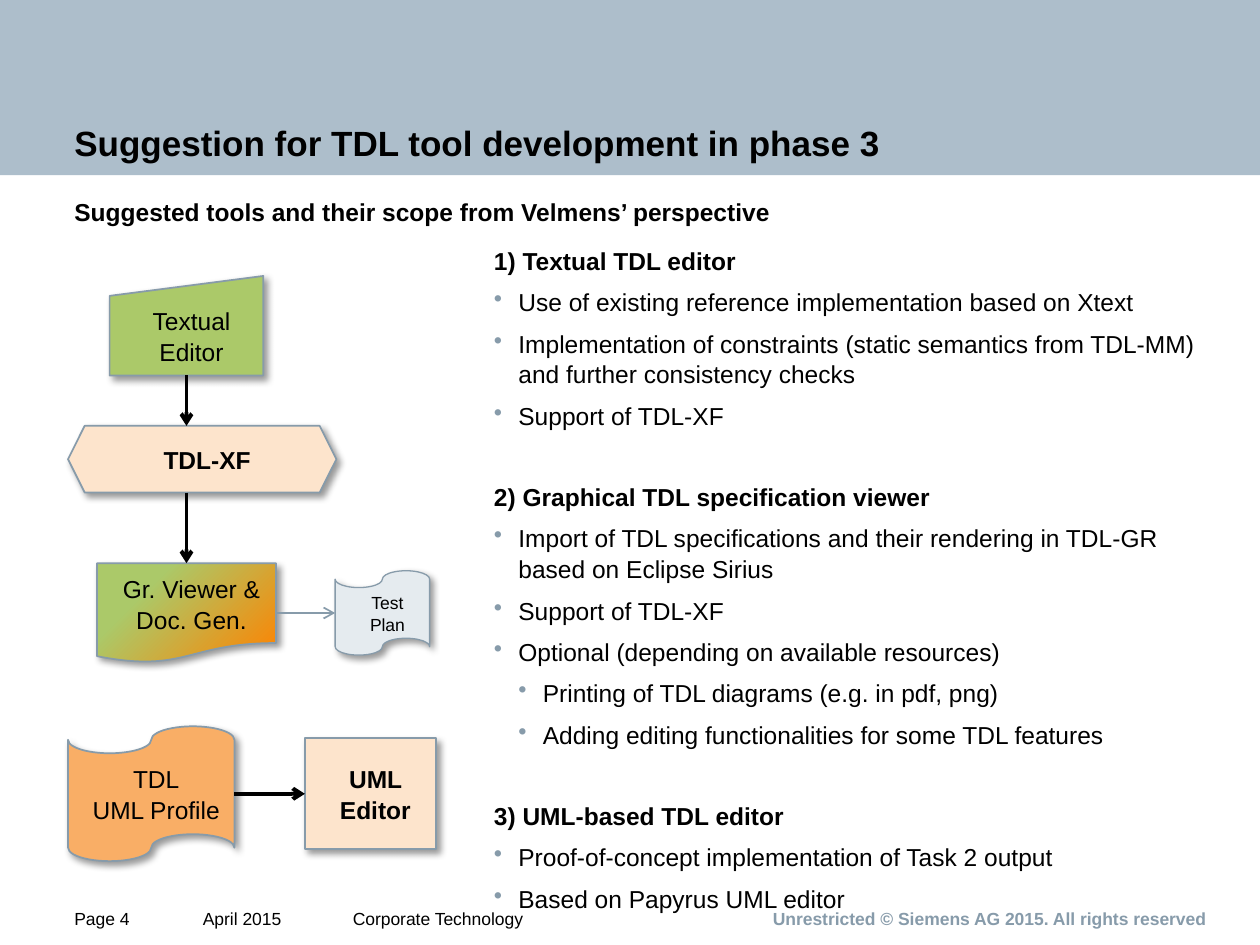
import pptx
import pptx.util
import pptx.dml.color
import pptx.enum.shapes
import pptx.enum.text
import pptx.oxml
import pptx.oxml.ns

SHAPE = pptx.enum.shapes.MSO_SHAPE
ALIGN = pptx.enum.text.PP_ALIGN
ANCHOR = pptx.enum.text.MSO_ANCHOR
COLS, ROWS = 100, 75
SLIDE_W, SLIDE_H = pptx.util.Inches(10), pptx.util.Inches(7.5)
BLACK, SLATE, BAND = "000000", "879BAA", "ADBECB"
GREEN, ORANGE, PEACH, APRICOT, MIST = "ABC969", "FF8200", "FDE4CC", "F9AE66", "E5EBEF"

TOOLS = [
    ("1) Textual TDL editor", [
        (1, "Use of existing reference implementation based on Xtext"),
        (1, "Implementation of constraints (static semantics from TDL-MM) "
            "and further consistency checks"),
        (1, "Support of TDL-XF")]),
    ("2) Graphical TDL specification viewer", [
        (1, "Import of TDL specifications and their rendering in TDL-GR based on Eclipse Sirius"),
        (1, "Support of TDL-XF"),
        (1, "Optional (depending on available resources)"),
        (2, "Printing of TDL diagrams (e.g. in pdf, png)"),
        (2, "Adding editing functionalities for some TDL features")]),
    ("3) UML-based TDL editor", [
        (1, "Proof-of-concept implementation of Task 2 output"),
        (1, "Based on Papyrus UML editor")]),
]


def rgb(color):
    return pptx.dml.color.RGBColor.from_string(color)


def across(cols):
    return round(SLIDE_W * cols / COLS)


def down(rows):
    return round(SLIDE_H * rows / ROWS)


def place(box, col, row, width, height):
    """Turn grid units inside a region box into lengths on the slide."""
    return across(box[0] + col), down(box[1] + row), across(width), down(height)


def xml(parent, markup):
    tag, rest = markup.split(" ", 1)
    element = pptx.oxml.parse_xml(f"<{tag} {pptx.oxml.ns.nsdecls('a')} {rest}")
    parent.append(element)


def style(paragraph, size, bold=False, color=BLACK, align=ALIGN.LEFT, spacing=1.05):
    paragraph.alignment = align
    paragraph.line_spacing = spacing
    font = paragraph.font
    font.name, font.size, font.bold = "Arial", pptx.util.Pt(size), bold
    font.color.rgb = rgb(color)


def set_frame(frame, insets=(0, 0, 0, 0), anchor=ANCHOR.TOP):
    frame.word_wrap = True
    frame.vertical_anchor = anchor
    left, top, right, bottom = insets
    frame.margin_left, frame.margin_right = across(left), across(right)
    frame.margin_top, frame.margin_bottom = down(top), down(bottom)


def add_text(slide, bounds, text, size, insets=(0, 0, 0, 0), anchor=ANCHOR.TOP, **look):
    frame = slide.shapes.add_textbox(*bounds).text_frame
    set_frame(frame, insets, anchor)
    frame.paragraphs[0].text = text
    style(frame.paragraphs[0], size, **look)


def header(slide, box):
    bounds = place(box, 0, 0, *box[2:])
    band = slide.shapes.add_shape(SHAPE.RECTANGLE, *bounds)
    band.shadow.inherit = False
    band.fill.solid()
    band.fill.fore_color.rgb = rgb(BAND)
    band.line.fill.background()
    add_text(slide, bounds, "Suggestion for TDL tool development in phase 3", 20,
             insets=(5.9, 4.3, 23.2, 2.6), anchor=ANCHOR.BOTTOM, bold=True)


def subtitle(slide, box):
    add_text(slide, place(box, 0, 0, *box[2:]),
             "Suggested tools and their scope from Velmens’ perspective", 14, bold=True)


def tool_list(slide, box):
    frame = slide.shapes.add_textbox(*place(box, 0, 0, *box[2:])).text_frame
    set_frame(frame)
    indent = across(1.94)

    def add_line(text, level, before, bullet):
        line = frame.paragraphs[0] if not frame.text else frame.add_paragraph()
        line.text = text
        line.space_before = pptx.util.Pt(before)
        properties = line._p.get_or_add_pPr()
        properties.set("marL", str(indent * level))
        properties.set("indent", str(-indent))
        line.line_spacing = 1.05
        if bullet:
            xml(properties, f'a:buClr ><a:srgbClr val="{SLATE}"/></a:buClr>')
            xml(properties, 'a:buChar char="•"/>')
        style(line, 14, bold=not bullet)

    for number, (heading, points) in enumerate(TOOLS):
        add_line(heading, 1, 28.8 if number else 0, False)
        for level, point in points:
            add_line(point, level, 6, True)


def add_node(slide, bounds, kind, text, fill, size=14, bold=False, border=1):
    node = slide.shapes.add_shape(kind, *bounds)
    node.shadow.inherit = False
    effects = node._element.spPr.find(pptx.oxml.ns.qn("a:effectLst"))
    xml(effects, 'a:outerShdw blurRad="50800" dist="38100" dir="2700000" algn="tl" '
                 f'rotWithShape="0"><a:srgbClr val="{BLACK}"><a:alpha val="40000"/>'
                 '</a:srgbClr></a:outerShdw>')
    if isinstance(fill, tuple):
        node.fill.gradient()
        node.fill.gradient_angle = 315
        for stop, position, color in zip(node.fill.gradient_stops, (0.27, 1), fill):
            stop.position = position
            stop.color.rgb = rgb(color)
    else:
        node.fill.solid()
        node.fill.fore_color.rgb = rgb(fill)
    node.line.color.rgb = rgb(SLATE)
    node.line.width = pptx.util.Pt(border)
    set_frame(node.text_frame, (1.6, 0.8, 0.8, 0.8), ANCHOR.MIDDLE)
    label = node.text_frame.paragraphs[0]
    label.text = text
    style(label, size, bold=bold, align=ALIGN.CENTER)
    return node


def add_arrow(slide, start, end, color=BLACK, width=2.25):
    """Each end is a (node, side) pair, or a point on the slide."""
    arrow = slide.shapes.add_connector(pptx.enum.shapes.MSO_CONNECTOR.STRAIGHT, 0, 0, 0, 0)
    if isinstance(start[0], int):
        arrow.begin_x, arrow.begin_y = start
    else:
        arrow.begin_connect(*start)
    if isinstance(end[0], int):
        arrow.end_x, arrow.end_y = end
    else:
        arrow.end_connect(*end)
    arrow.line.color.rgb = rgb(color)
    arrow.line.width = pptx.util.Pt(width)
    xml(arrow.line._get_or_add_ln(), 'a:tailEnd type="arrow"/>')
    xml(arrow._element.spPr, "a:effectLst />")


def tool_chain(slide, box):
    # Exchange format between textual editor and viewer
    exchange = add_node(slide, place(box, 0, 11.9, 21.3, 5.3), SHAPE.HEXAGON,
                        "TDL-XF", PEACH, bold=True)
    editor = add_node(slide, place(box, 3.3, 0, 12.2, 7.9), SHAPE.FLOWCHART_MANUAL_INPUT,
                      "Textual Editor", GREEN)
    viewer = add_node(slide, place(box, 2.3, 22.8, 14.2, 7.9), SHAPE.FLOWCHART_DOCUMENT,
                      "Gr. Viewer & Doc. Gen.", (GREEN, ORANGE))
    axis = editor.left + editor.width // 2
    add_arrow(slide, (editor, 2), (axis, exchange.top))
    add_arrow(slide, (axis, exchange.top + exchange.height), (viewer, 0))

    # Generated document
    plan = add_node(slide, place(box, 21.2, 23.4, 7.5, 6.7), SHAPE.FLOWCHART_PUNCHED_TAPE,
                    "Test Plan", MIST, size=10, border=0.75)
    add_arrow(slide, (viewer, 3), (plan, 1), SLATE, 1)

    # UML route
    profile = add_node(slide, place(box, 0, 35.75, 13.2, 10.7), SHAPE.FLOWCHART_PUNCHED_TAPE,
                       "TDL\nUML Profile", APRICOT)
    uml_editor = add_node(slide, place(box, 18.8, 36.7, 10.4, 8.8), SHAPE.RECTANGLE,
                          "UML Editor", PEACH, bold=True)
    add_arrow(slide, (profile, 3), (uml_editor, 1))


def footer(slide, box):
    for col, width, text in ((0, 6.5, "Page 4"), (10.2, 11.8, "April 2015"),
                             (22.1, 22, "Corporate Technology")):
        add_text(slide, place(box, col, 0, width, box[3]), text, 10,
                 anchor=ANCHOR.BOTTOM, spacing=1)
    add_text(slide, place(box, 45.7, 0, 44.1, box[3]),
             "Unrestricted © Siemens AG 2015. All rights reserved", 10, anchor=ANCHOR.BOTTOM,
             bold=True, color=SLATE, align=ALIGN.RIGHT, spacing=1)


def main():
    deck = pptx.Presentation()
    deck.slide_width, deck.slide_height = SLIDE_W, SLIDE_H
    slide = deck.slides.add_slide(deck.slide_layouts[6])
    # Regions as (column, row, columns, rows)
    header(slide, (0, 0, COLS, 13.9))
    footer(slide, (5.9, 72, 89.8, 1.7))
    subtitle(slide, (5.9, 15.5, 89.8, 2.4))
    tool_list(slide, (39.2, 19.4, 56.5, 48))
    tool_chain(slide, (5.4, 21.9, 29.2, 46.5))
    deck.save("out.pptx")


if __name__ == "__main__":
    main()
